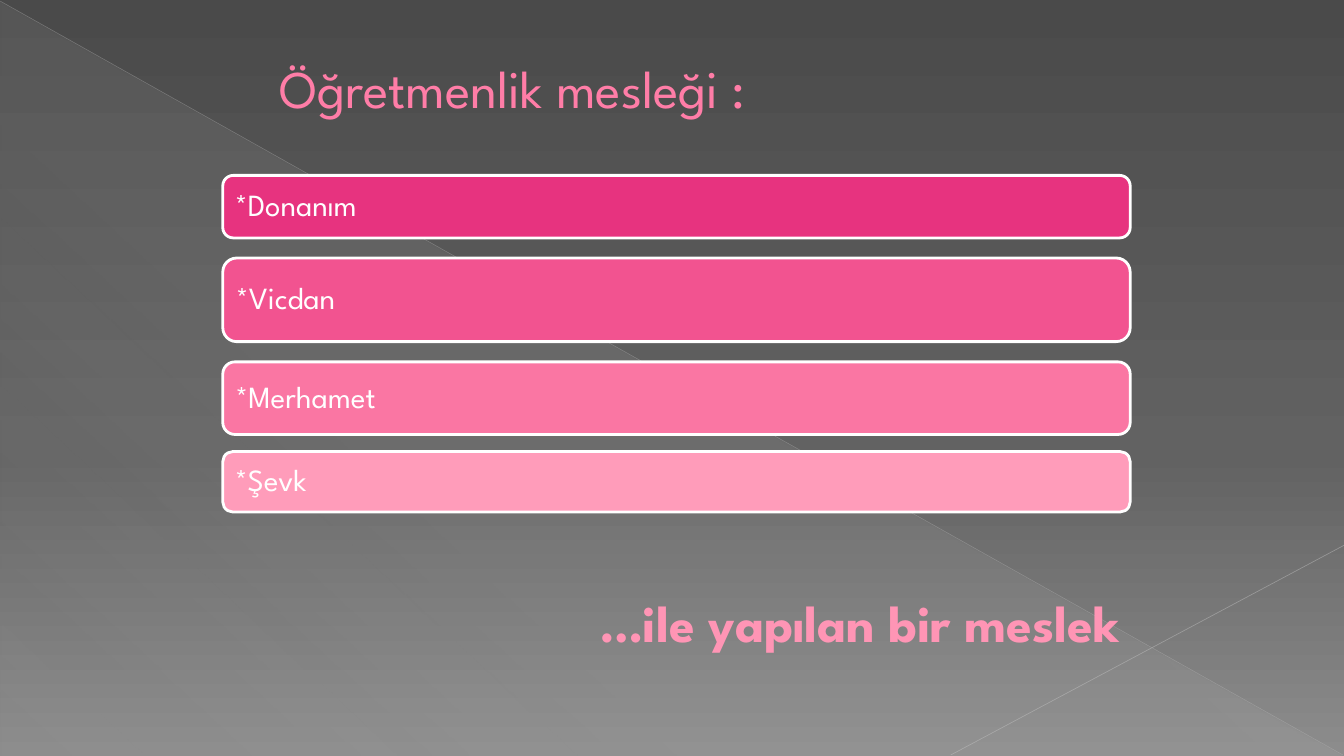
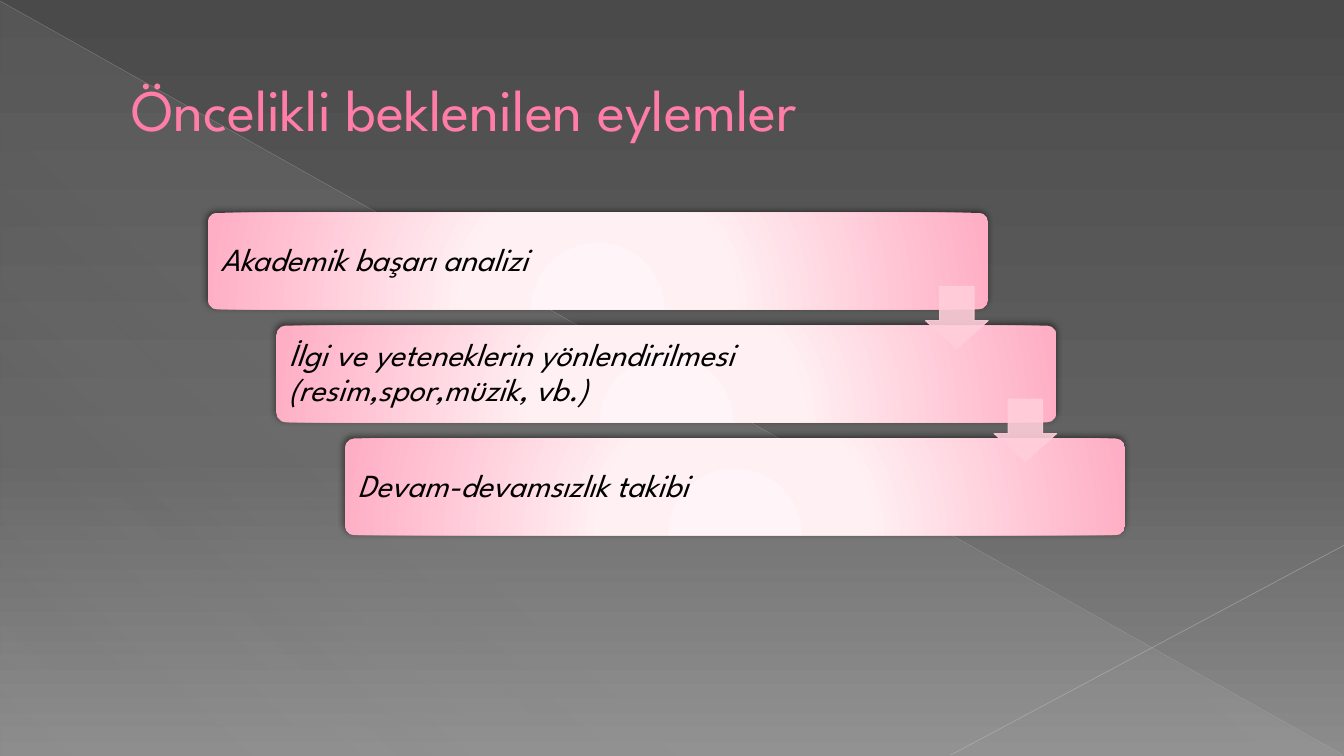
from lxml import etree
from pptx import Presentation
from pptx.dml.color import RGBColor
from pptx.enum.shapes import MSO_CONNECTOR, MSO_SHAPE
from pptx.enum.text import MSO_ANCHOR, PP_ALIGN
from pptx.oxml.ns import qn
from pptx.util import Inches, Pt

ROUNDED = MSO_SHAPE.ROUNDED_RECTANGLE
TRIANGLE = MSO_SHAPE.RIGHT_TRIANGLE
ARROW = MSO_SHAPE.DOWN_ARROW
STRAIGHT = MSO_CONNECTOR.STRAIGHT
TOP, MIDDLE = MSO_ANCHOR.TOP, MSO_ANCHOR.MIDDLE
LEFT, RIGHT = PP_ALIGN.LEFT, PP_ALIGN.RIGHT

FONT = "League Spartan"
WHITE = RGBColor(0xFF, 0xFF, 0xFF)
BLACK = RGBColor(0, 0, 0)
PINK = RGBColor(0xFF, 0x7D, 0xA7)
SOFT_PINK = RGBColor(0xFF, 0x95, 0xB5)
DARK_PINK = RGBColor(0xB1, 0x27, 0x61)
ARROW_PINK = RGBColor(0xFF, 0xCE, 0xDA)
HAZE = RGBColor(0xD2, 0xD2, 0xD2)
GREY = RGBColor(0xBF, 0xBF, 0xBF)
LIGHT_GREY = RGBColor(0xC6, 0xC6, 0xC6)
BAR_PINKS = (RGBColor(0xE7, 0x33, 0x7F), RGBColor(0xF2, 0x53, 0x90),
             RGBColor(0xFA, 0x76, 0xA3), RGBColor(0xFF, 0x9C, 0xBA))

# Gradient stops: (position %, colour, opacity %)
BACKGROUND = ((0, RGBColor(0x4A, 0x4A, 0x4A), 100),
              (60, RGBColor(0x62, 0x62, 0x62), 100),
              (100, RGBColor(0x8C, 0x8C, 0x8C), 100))
HAZE_STOPS = ((0, HAZE, 10), (70, HAZE, 8), (100, HAZE, 1))
CLOSING_STOPS = ((0, SOFT_PINK, 100), (73, SOFT_PINK, 100), (100, PINK, 100))
STEP_STOPS = ((0, RGBColor(0xFF, 0xF4, 0xF7), 100),
              (34, RGBColor(0xFF, 0xF0, 0xF3), 100),
              (100, RGBColor(0xFF, 0xAF, 0xC5), 100))
STEP_FOCUS = {"l": 50, "t": 155, "r": 50, "b": -55}


def inches(*values):
    return [Inches(v) for v in values]


def apply(obj, formats):
    for name, value in formats.items():
        setattr(obj, name, value)


def sub(parent, tag, **attrs):
    el = etree.SubElement(parent, qn(tag))
    for name, value in attrs.items():
        el.set(name, str(value))
    return el


def add_color(parent, color, opacity=100):
    clr = sub(parent, "a:srgbClr", val=color)
    if opacity < 100:
        sub(clr, "a:alpha", val=opacity * 1000)


def set_gradient(fill, props, stops, angle=0, focus=None):
    """Fill the owner of props with a linear gradient, or a circular one around focus."""
    fill.solid()
    fill.fore_color.rgb = stops[0][1]
    grad = etree.Element(qn("a:gradFill"), rotWithShape="1")
    gs_lst = sub(grad, "a:gsLst")
    for pos, color, opacity in stops:
        add_color(sub(gs_lst, "a:gs", pos=pos * 1000), color, opacity)
    if focus:
        rect = {side: value * 1000 for side, value in focus.items()}
        sub(sub(grad, "a:path", path="circle"), "a:fillToRect", **rect)
    else:
        sub(grad, "a:lin", ang=angle * 60000, scaled=0)
    props.replace(props.find(qn("a:solidFill")), grad)


def set_opacity(sp, percent):
    for clr in sp._element.spPr.iter(qn("a:srgbClr")):
        sub(clr, "a:alpha", val=percent * 1000)


def add_shape(slide, kind, box, fill=None, line=None, width=1):
    sp = slide.shapes.add_shape(kind, *inches(*box))
    sp.shadow.inherit = False
    if fill is not None:
        sp.fill.solid()
        sp.fill.fore_color.rgb = fill
    if line is None:
        sp.line.fill.background()
    else:
        sp.line.color.rgb = line
        sp.line.width = Pt(width)
    return sp


def add_line(slide, start, end, color, width, opacity):
    sp = slide.shapes.add_connector(STRAIGHT, *inches(*start, *end))
    sp.line.color.rgb = color
    sp.line.width = Pt(width)
    set_opacity(sp, opacity)
    sub(sp._element.spPr, "a:effectLst")


def write(sp, text, size, color, margins, anchor=MIDDLE, align=LEFT,
          spacing=1.0, **style):
    """Write one paragraph; margins are left, top, right and bottom."""
    tf = sp.text_frame
    sides = ("margin_left", "margin_top", "margin_right", "margin_bottom")
    apply(tf, {"word_wrap": True, "vertical_anchor": anchor,
               **dict(zip(sides, inches(*margins)))})
    p = tf.paragraphs[0]
    apply(p, {"alignment": align, "line_spacing": spacing})
    r = p.add_run()
    r.text = text
    apply(r.font, {"name": FONT, "size": Pt(size), **style})
    r.font.color.rgb = color
    return r


def add_title(slide, box, text, size, anchor=MIDDLE):
    sp = slide.shapes.add_textbox(*inches(*box))
    r = write(sp, text, size, PINK, (0.63, 0.08, 0.1, 0.05), anchor)
    ln = etree.Element(qn("a:ln"), w=str(Pt(0.5)))
    add_color(sub(ln, "a:solidFill"), DARK_PINK)
    r._r.get_or_add_rPr().insert(0, ln)


def add_closing(slide, box, text):
    sp = slide.shapes.add_textbox(*inches(*box))
    r = write(sp, text, 36.9, SOFT_PINK, (0.1, 0.08, 0.1, 0.05), TOP, RIGHT, bold=True)
    set_gradient(r.font.fill, r._r.get_or_add_rPr(), CLOSING_STOPS, angle=80)


def add_slide(prs):
    """Add a blank slide with the shared background, haze and diagonals."""
    slide = prs.slides.add_slide(prs.slide_layouts[6])
    fill = slide.background.fill
    fill.solid()
    props = slide._element.find(".//" + qn("p:bgPr"))
    set_gradient(fill, props, BACKGROUND, angle=90)
    sp = add_shape(slide, TRIANGLE, (0.01, 0.02, 13.31, 7.48))
    set_gradient(sp.fill, sp._element.spPr, HAZE_STOPS, angle=133)
    add_line(slide, (0, 0.01), (13.32, 7.49), GREY, 0.39, 35)
    add_line(slide, (13.33, 5.41), (9.43, 7.49), LIGHT_GREY, 0.47, 45)
    return slide


def add_bars(slide, left, top, width, bars):
    """Stack bars given as (text, offset from top, height)."""
    for (text, offset, height), color in zip(bars, BAR_PINKS):
        box = (left, top + offset, width, height)
        sp = add_shape(slide, ROUNDED, box, color, WHITE, 2)
        write(sp, text, 22, WHITE, [0.09] * 4, spacing=0.9)


def add_step_shadow(sp):
    effects = sp._element.spPr.find(qn("a:effectLst"))
    shadow = sub(effects, "a:outerShdw", blurRad=Pt(5), dist=Pt(2),
                 dir=245 * 60000, algn="tl", rotWithShape=0)
    add_color(shadow, BLACK, 50)


def add_staircase(slide, left, top, steps):
    """Place steps down to the right, with an arrow from each to the next."""
    width, height, dx, dy, arrow = 7.74, 0.96, 0.68, 1.12, 0.62
    for i, text in enumerate(steps):
        sp = add_shape(slide, ROUNDED, (left + i * dx, top + i * dy, width, height))
        sp.adjustments[0] = 0.1
        set_gradient(sp.fill, sp._element.spPr, STEP_STOPS, focus=STEP_FOCUS)
        add_step_shadow(sp)
        write(sp, text, 23, BLACK, (0.1, 0.1, 1.4, 0.1), spacing=0.9, italic=True)
    for i in range(len(steps) - 1):
        box = (left + width - arrow + i * dx, top + 0.73 + i * dy, arrow, arrow)
        sp = add_shape(slide, ARROW, box, ARROW_PINK, ARROW_PINK, 0.75)
        sp.adjustments[0], sp.adjustments[1] = 0.45, 0.55
        # The shaft takes 55 % of the width, the head 45 % of the height.
        sp.adjustments[0], sp.adjustments[1] = 0.55, 0.45
        set_opacity(sp, 90)


def add_profession_slide(prs):
    slide = add_slide(prs)
    add_title(slide, (2.14, 0.47, 9, 1.25), "Öğretmenlik mesleği :", 37.8, TOP)
    add_bars(slide, 2.21, 1.74, 9, (("*Donanım", 0, 0.62), ("*Vicdan", 0.82, 0.83),
                                    ("*Merhamet", 1.85, 0.72), ("*Şevk", 2.74, 0.6)))
    add_closing(slide, (2.21, 5.78, 9, 1.25), "…ile yapılan bir meslek")


def add_actions_slide(prs):
    slide = add_slide(prs)
    add_title(slide, (0.67, 0.29, 12, 1.53), "Öncelikli beklenilen eylemler", 42)
    add_staircase(slide, 2.06, 2.11, (
        "Akademik başarı analizi",
        "İlgi ve yeteneklerin yönlendirilmesi (resim,spor,müzik, vb.)",
        "Devam-devamsızlık takibi"))


def main():
    prs = Presentation()
    prs.slide_width, prs.slide_height = inches(13.33, 7.5)
    add_profession_slide(prs)
    add_actions_slide(prs)
    prs.save("out.pptx")


if __name__ == "__main__":
    main()
